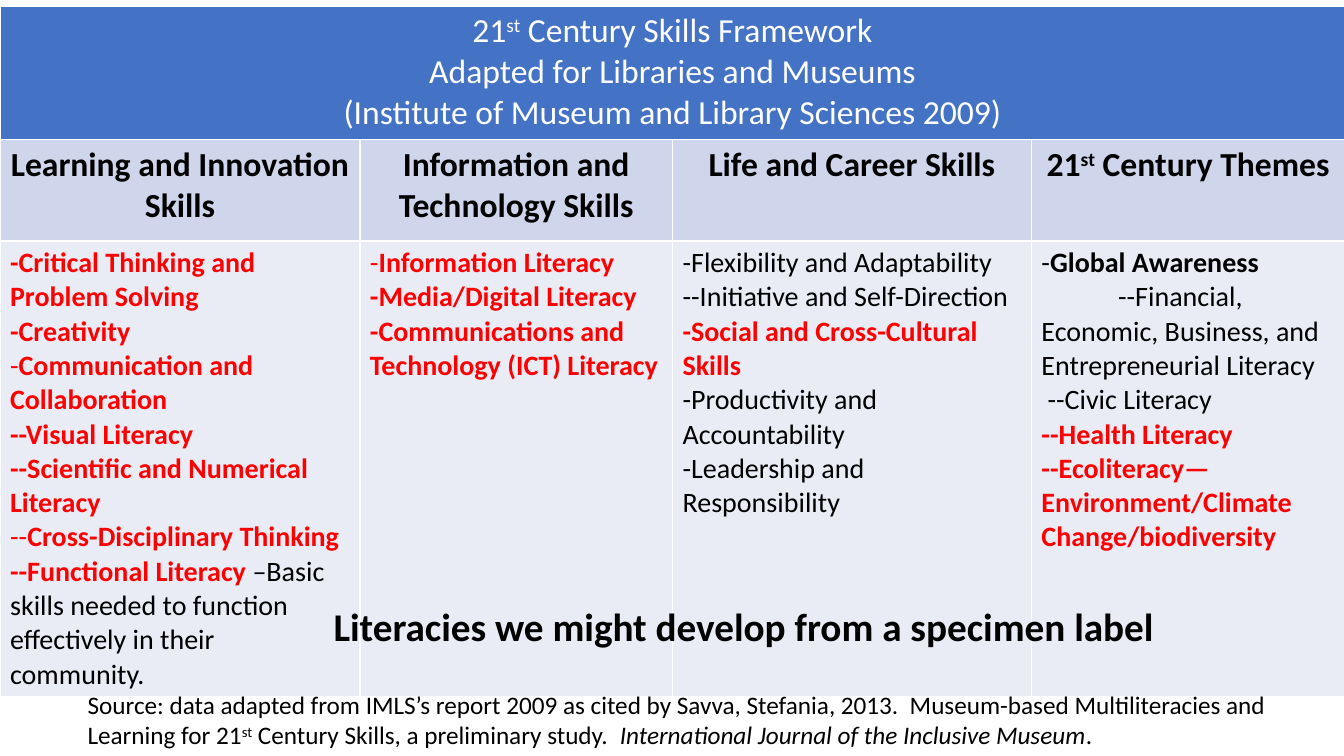
"""Builds the 21st century skills framework slide."""
from pptx import Presentation
from pptx.dml.color import RGBColor
from pptx.enum.text import MSO_AUTO_SIZE, PP_ALIGN
from pptx.util import Inches, Pt

BLUE = RGBColor(0x44, 0x72, 0xC4)
PALE = RGBColor(0xCF, 0xD5, 0xEA)
PALER = RGBColor(0xE9, 0xEB, 0xF5)
WHITE = RGBColor(0xFF, 0xFF, 0xFF)
BLACK = RGBColor(0, 0, 0)
RED = RGBColor(0xFF, 0, 0)


def write(tf, paras, size, color=BLACK, align=PP_ALIGN.LEFT):
    """Write (text, flags) runs: b bold, i italic, r red, s superscript."""
    for i, runs in enumerate(paras):
        p = tf.add_paragraph() if i else tf.paragraphs[0]
        p.alignment = align
        for text, flags in runs:
            r = p.add_run()
            r.text = text
            r.font.name = "Calibri"
            r.font.size = Pt(size)
            r.font.bold = "b" in flags
            r.font.italic = "i" in flags
            r.font.color.rgb = RED if "r" in flags else color
            if "s" in flags:
                r._r.get_or_add_rPr().set("baseline", "30000")


def add_text(s, left, top, width, height, runs, size, wrap):
    tf = s.shapes.add_textbox(Inches(left), Inches(top), Inches(width), Inches(height)).text_frame
    tf.word_wrap = wrap
    tf.auto_size = MSO_AUTO_SIZE.SHAPE_TO_FIT_TEXT
    write(tf, [runs], size)


TITLE = [
    [("21", ""), ("st", "s"), (" Century Skills Framework", "")],
    [("Adapted for Libraries and Museums", "")],
    [("(Institute of Museum and Library Sciences 2009)", "")],
]
HEADINGS = [
    [("Learning and Innovation Skills", "b")],
    [("Information and Technology Skills", "b")],
    [("Life and Career Skills", "b")],
    [("21", "b"), ("st", "bs"), (" Century Themes", "b")],
]
SKILLS = [
    [
        [("-Critical Thinking and Problem Solving", "br")],
        [("-Creativity", "br")],
        [("-", "r"), ("Communication and Collaboration", "br")],
        [("--Visual Literacy", "br")],
        [("--Scientific and Numerical Literacy", "br")],
        [("--", "r"), ("Cross-Disciplinary Thinking", "br")],
        [("--Functional Literacy ", "br"),
         ("–Basic skills needed to function effectively in their community.", "")],
    ],
    [
        [("-", "r"), ("Information Literacy", "br")],
        [("-Media/Digital Literacy", "br")],
        [("-Communications and Technology (ICT) Literacy", "br")],
    ],
    [
        [("-Flexibility and Adaptability", "")],
        [("--Initiative and Self-Direction", "")],
        [("-Social and Cross-Cultural Skills", "br")],
        [("-Productivity and Accountability", "")],
        [("-Leadership and Responsibility", "")],
    ],
    [
        [("-", ""), ("Global Awareness", "b")],
        [("--Financial, Economic, Business, and Entrepreneurial Literacy", "")],
        [("--Civic Literacy", "")],
        [("--Health Literacy", "br")],
        [("--Ecoliteracy—Environment/Climate Change/biodiversity", "br")],
    ],
]

prs = Presentation()
prs.slide_width, prs.slide_height = Inches(13.33), Inches(7.5)
s = prs.slides.add_slide(prs.slide_layouts[6])

table = s.shapes.add_table(3, 4, Inches(0), Inches(0.06), Inches(13.33), Inches(6.24)).table
for col, width in zip(table.columns, (3.57, 3.1, 3.56, 3.11)):
    col.width = Inches(width)
for row, height, fill in zip(table.rows, (1.31, 1.01, 3.92), (BLUE, PALE, PALER)):
    row.height = Inches(height)
    for cell in row.cells:
        cell.fill.solid()
        cell.fill.fore_color.rgb = fill

table.cell(0, 0).merge(table.cell(0, 3))
write(table.cell(0, 0).text_frame, TITLE, 24, WHITE, PP_ALIGN.CENTER)
for i, (heading, skills) in enumerate(zip(HEADINGS, SKILLS)):
    write(table.cell(1, i).text_frame, [heading], 24, align=PP_ALIGN.CENTER)
    write(table.cell(2, i).text_frame, skills, 20)

themes = table.cell(2, 3).text_frame.paragraphs
for p, indent in ((themes[1], 0.76), (themes[2], 0.06)):
    p._p.get_or_add_pPr().set("indent", str(Inches(indent)))

add_text(s, 0.77, 6.79, 12.14, 0.71, [
    ("Source: data adapted from IMLS’s report 2009 as cited by Savva, Stefania, 2013.  "
     "Museum-based Multiliteracies and Learning for 21", ""),
    ("st", "s"),
    (" Century Skills, a preliminary study.  ", ""),
    ("International Journal of the Inclusive Museum", "i"),
    (".", ""),
], 18, True)
add_text(s, 3.21, 5.93, 8.52, 0.57,
         [("Literacies we might develop from a specimen label", "b")], 28, False)

prs.save("out.pptx")
